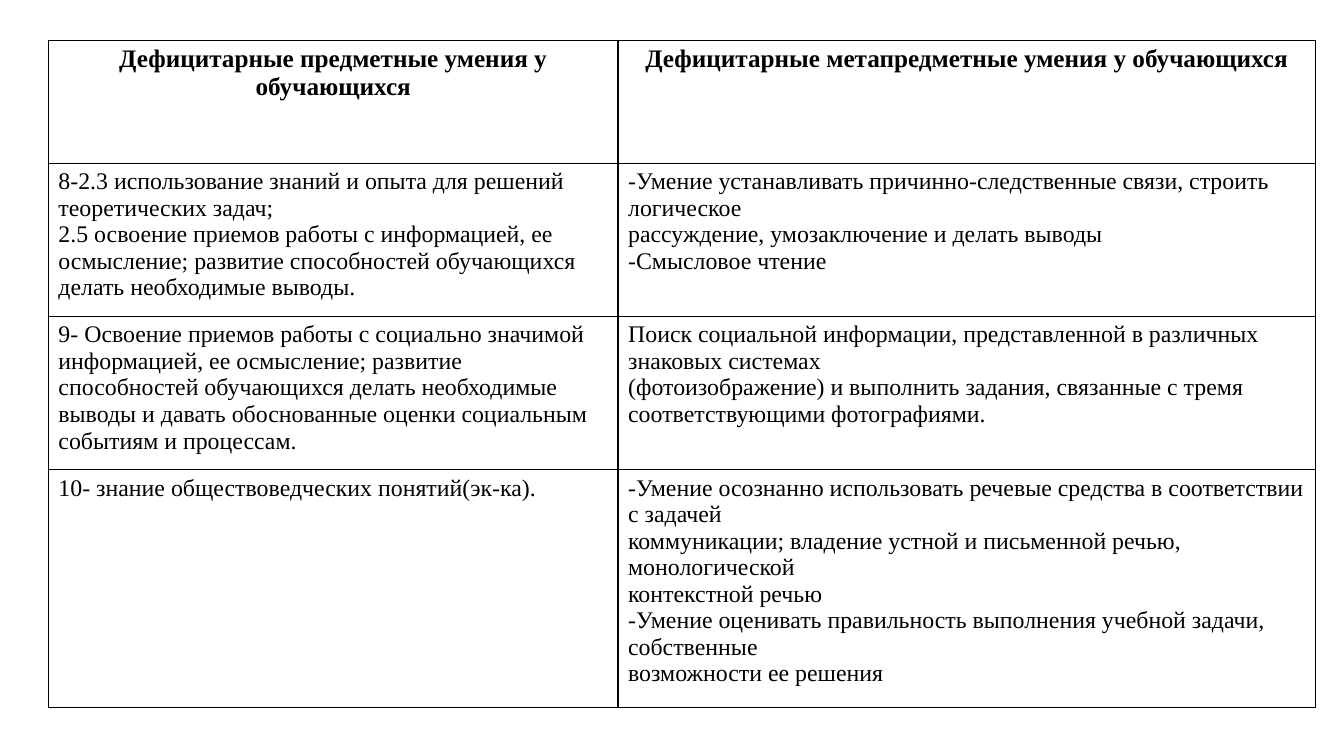
"""Build a slide with a table of subject and meta-subject skill gaps."""
from dataclasses import dataclass

from lxml import etree
from pptx import Presentation
from pptx import util as u
from pptx.dml.color import RGBColor
from pptx.enum import text
from pptx.oxml.ns import qn

PX = 9144
FONT = "Times New Roman"
INK = "000000"
PAPER = "FFFFFF"


@dataclass
class Row:
    high: int
    left: list[str]
    right: list[str]
    size: int = 17
    bold: bool = False
    align: text.PP_ALIGN = text.PP_ALIGN.LEFT


COLS = [565, 692]
ROWS = [
    Row(122, ["Дефицитарные предметные умения у обучающихся"],
        ["Дефицитарные метапредметные умения у обучающихся"],
        size=18, bold=True, align=text.PP_ALIGN.CENTER),
    Row(152,
        ["8-2.3 использование знаний и опыта для решений теоретических задач;",
         "2.5 освоение приемов работы с информацией, ее",
         "осмысление; развитие способностей обучающихся делать необходимые выводы."],
        ["-Умение устанавливать причинно-следственные связи, строить логическое",
         "рассуждение, умозаключение и делать выводы",
         "-Смысловое чтение"]),
    Row(152,
        ["9- Освоение приемов работы с социально значимой информацией, ее осмысление; "
         "развитие способностей обучающихся делать необходимые выводы и давать "
         "обоснованные оценки социальным событиям и процессам."],
        ["Поиск социальной информации, представленной в различных знаковых системах",
         "(фотоизображение) и выполнить задания, связанные с тремя",
         "соответствующими фотографиями."]),
    Row(236, ["10- знание обществоведческих понятий(эк-ка)."],
        ["-Умение осознанно использовать речевые средства в соответствии с задачей",
         "коммуникации; владение устной и письменной речью, монологической",
         "контекстной речью",
         "-Умение оценивать правильность выполнения учебной задачи, собственные",
         "возможности ее решения"]),
]


def px(n: int) -> u.Emu:
    return u.Emu(n * PX)


def hue(code: str) -> RGBColor:
    return RGBColor.from_string(code)


def write(frame, lines: list[str], *, size: int, bold: bool,
          align: text.PP_ALIGN, color: str = INK) -> None:
    for i, line in enumerate(lines):
        para = frame.paragraphs[0] if i == 0 else frame.add_paragraph()
        para.alignment = align
        run = para.add_run()
        run.text = line
        run.font.name = FONT
        run.font.size = u.Pt(size)
        run.font.bold = bold
        run.font.color.rgb = hue(color)


def edge(cell, color: str = INK, wide: int = 1) -> None:
    props = cell._tc.get_or_add_tcPr()
    for side in ("lnL", "lnR", "lnT", "lnB"):
        line = etree.SubElement(props, qn(f"a:{side}"), w=str(u.Pt(wide)))
        fill = etree.SubElement(line, qn("a:solidFill"))
        etree.SubElement(fill, qn("a:srgbClr"), val=color)


def grid(slide, left: int, top: int) -> None:
    frame = slide.shapes.add_table(
        len(ROWS), len(COLS), px(left), px(top),
        px(sum(COLS)), px(sum(row.high for row in ROWS)))
    table = frame.table
    table.first_row = table.horz_banding = False
    for col, wide in zip(table.columns, COLS):
        col.width = px(wide)
    for r, row in enumerate(ROWS):
        table.rows[r].height = px(row.high)
        for c, lines in enumerate((row.left, row.right)):
            cell = table.cell(r, c)
            edge(cell)
            cell.fill.solid()
            cell.fill.fore_color.rgb = hue(PAPER)
            write(cell.text_frame, lines, size=row.size, bold=row.bold,
                  align=row.align)


def main() -> None:
    deck = Presentation()
    deck.slide_width, deck.slide_height = px(1333), px(750)
    slide = deck.slides.add_slide(deck.slide_layouts[6])
    grid(slide, 48, 40)
    deck.save("out.pptx")


if __name__ == "__main__":
    main()
